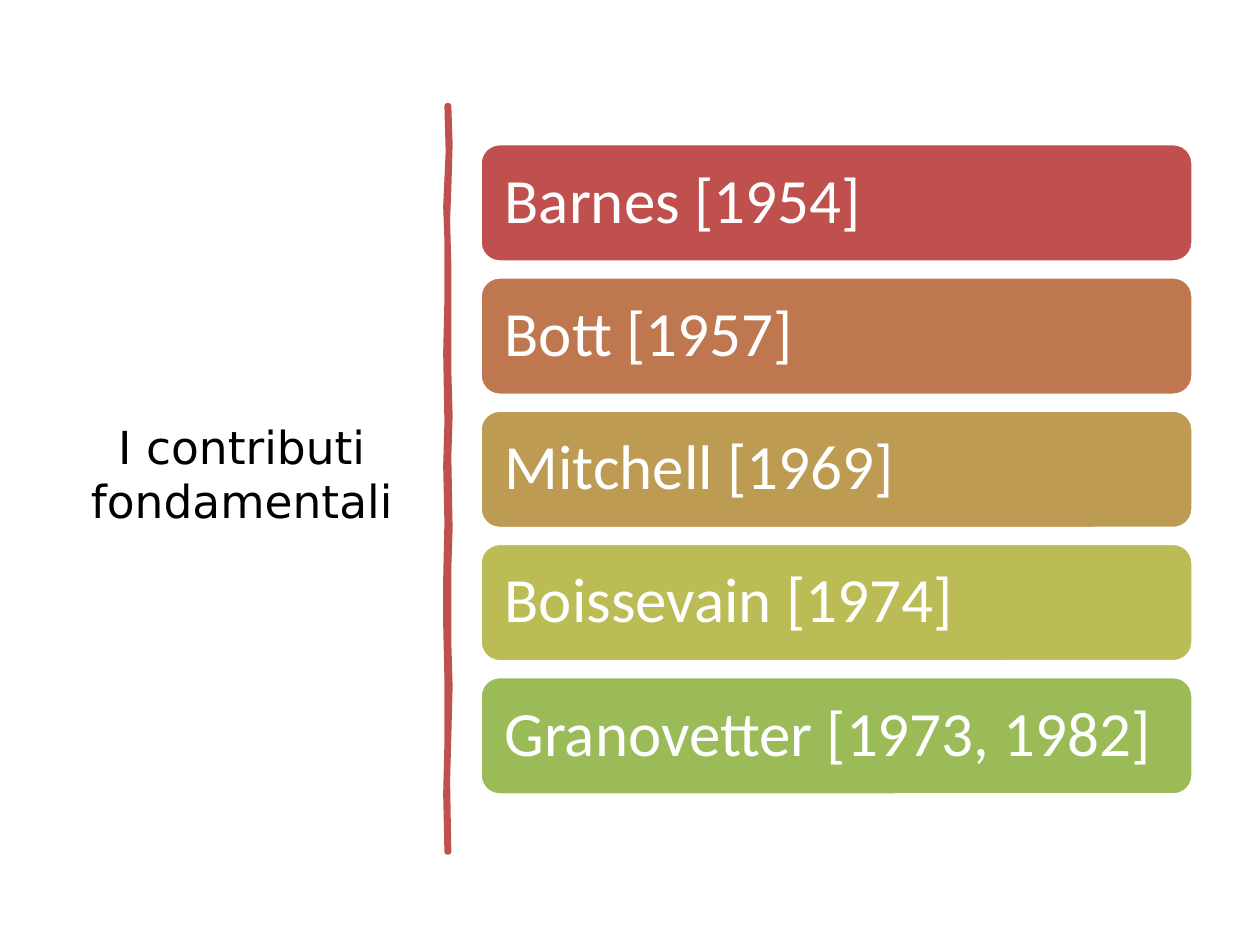
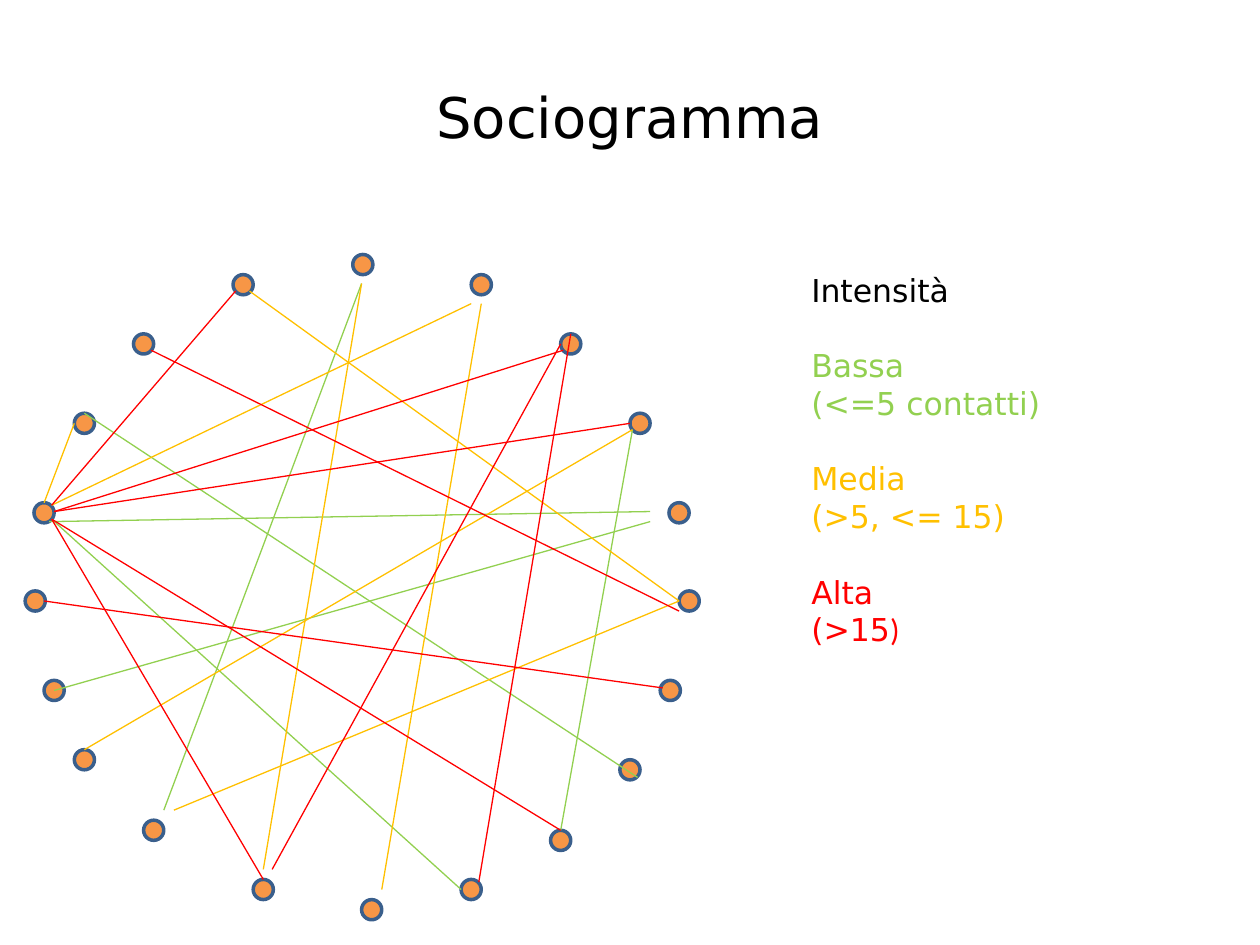
from dataclasses import dataclass
from typing import Any, NamedTuple

from lxml.etree import SubElement
from pptx import Presentation
from pptx.dml.color import RGBColor as Rgb
from pptx.enum.shapes import MSO_CONNECTOR as Conn, MSO_SHAPE as Form
from pptx.enum.text import MSO_ANCHOR as Anchor, PP_ALIGN as Align
from pptx.oxml.ns import qn
from pptx.util import Inches, Pt


# Shared colours, fonts and sizes
@dataclass(frozen=True)
class Theme:
    sans: str = "DejaVu Sans"
    body: str = "Calibri"
    black: str = "000000"
    white: str = "FFFFFF"
    brush: str = "C0504D"
    node: str = "F79646"
    rim: str = "3A5F8C"
    low: str = "92D050"
    mid: str = "FFC000"
    high: str = "FF0000"
    side: int = 26
    head: int = 32
    bar: int = 36
    key: int = 18
    thin: float = 0.75
    edge: float = 2
    thick: float = 3.25


THEME = Theme()


class Box(NamedTuple):
    left: float
    top: float
    width: float
    height: float


class Bar(NamedTuple):
    text: str
    fill: str


class Link(NamedTuple):
    x1: float
    y1: float
    x2: float
    y2: float


class Level(NamedTuple):
    name: str
    range: str
    tone: str
    links: list[Link]


# Slide 1: authors and the hand-drawn rule
BARS = [
    Bar("Barnes [1954]", "C0504D"),
    Bar("Bott [1957]", "BF7750"),
    Bar("Mitchell [1969]", "BD9B53"),
    Bar("Boissevain [1974]", "BCBC56"),
    Bar("Granovetter [1973, 1982]", "9BBB59"),
]
FIRST, LAST = 1.14, 5.37
RIGHT = [(3.56, 0.84), (3.57, 1.15), (3.56, 1.5), (3.55, 1.75), (3.56, 2.1),
         (3.56, 2.94), (3.57, 3.3), (3.56, 3.62), (3.57, 4.2), (3.56, 4.5),
         (3.56, 5.1), (3.57, 5.45), (3.56, 5.84), (3.55, 6.2), (3.56, 6.76)]
LEFT = [(3.55, 6.76), (3.54, 6.3), (3.55, 5.9), (3.55, 5.39), (3.54, 4.95),
        (3.54, 4.6), (3.55, 4.15), (3.54, 3.7), (3.55, 3.35), (3.54, 2.8),
        (3.55, 2.38), (3.55, 1.9), (3.54, 1.64), (3.56, 1.2), (3.55, 0.84)]

# Slide 2: nodes (left, top) and links by strength
DOT = 0.16
NODES = [
    (2.8, 2.02), (3.74, 2.18), (4.45, 2.65), (5, 3.28), (5.31, 3.99),
    (5.39, 4.69), (1.06, 2.65), (1.85, 2.18), (2.87, 7.14), (3.66, 6.98),
    (4.37, 6.59), (4.92, 6.03), (5.24, 5.4), (0.27, 3.99), (0.59, 3.28),
    (0.2, 4.69), (0.35, 5.4), (0.59, 5.95), (1.14, 6.51), (2.01, 6.98),
]
LEVELS = [
    Level("Bassa", "(<=5 contatti)", THEME.low, [
        Link(0.39, 4.14, 5.16, 4.06), Link(0.41, 4.12, 3.66, 7.06),
        Link(2.87, 2.25, 1.3, 6.43), Link(5.16, 4.14, 0.43, 5.48),
        Link(5.06, 6.17, 0.67, 3.28), Link(5.02, 3.41, 4.45, 6.59),
    ]),
    Level("Media", "(>5, <= 15)", THEME.mid, [
        Link(2.87, 2.25, 2.09, 6.9), Link(3.74, 2.41, 0.41, 4.01),
        Link(5.39, 4.77, 1.38, 6.43), Link(1.98, 2.31, 5.39, 4.77),
        Link(5.02, 3.41, 0.67, 5.95), Link(3.82, 2.41, 3.03, 7.06),
        Link(0.59, 3.36, 0.35, 3.99),
    ]),
    Level("Alta", "(>15)", THEME.high, [
        Link(4.53, 2.65, 3.8, 7), Link(5, 3.36, 0.43, 4.06),
        Link(4.47, 2.78, 0.43, 4.06), Link(1.87, 2.31, 0.41, 4.01),
        Link(1.2, 2.78, 5.39, 4.85), Link(4.45, 2.73, 2.16, 6.9),
        Link(0.41, 4.12, 2.09, 6.98), Link(5.26, 5.46, 0.35, 4.77),
        Link(0.41, 4.12, 4.45, 6.59),
    ]),
]


# Helpers
def apply(item: Any, values: dict[str, Any]) -> None:
    for name, value in values.items():
        setattr(item, name, value)


def inch(box: Box) -> list[int]:
    return [Inches(part) for part in box]


def write(para: Any, text: str, face: str, size: int, tone: str) -> None:
    run = para.add_run()
    run.text = text
    apply(run.font, {"name": face, "size": Pt(size)})
    run.font.color.rgb = Rgb.from_string(tone)


def stroke(line: Any, tone: str, width: float) -> None:
    line.color.rgb = Rgb.from_string(tone)
    line.width = Pt(width)


def paint(shape: Any, fill: str, rim: str, width: float) -> None:
    shape.shadow.inherit = False
    shape.fill.solid()
    shape.fill.fore_color.rgb = Rgb.from_string(fill)
    stroke(shape.line, rim, width)


def add_title(slide: Any, text: str, box: Box, size: int) -> None:
    frame = slide.shapes.add_textbox(*inch(box)).text_frame
    apply(frame, {"word_wrap": True, "vertical_anchor": Anchor.MIDDLE})
    para = frame.paragraphs[0]
    para.alignment = Align.CENTER
    write(para, text, THEME.sans, size, THEME.black)


def add_brush(slide: Any) -> None:
    points = [(Inches(x), Inches(y)) for x, y in RIGHT + LEFT]
    build = slide.shapes.build_freeform(*points[0])
    build.add_line_segments(points[1:], close=True)
    paint(build.convert_to_shape(), THEME.brush, THEME.brush, THEME.thick)


def add_bar(slide: Any, bar: Bar, top: float) -> None:
    box = Box(3.81, top, 5.66, 0.94)
    shape = slide.shapes.add_shape(Form.ROUNDED_RECTANGLE, *inch(box))
    paint(shape, bar.fill, THEME.white, THEME.edge)
    frame = shape.text_frame
    pad = Inches(0.15)
    apply(frame, {"word_wrap": True, "vertical_anchor": Anchor.MIDDLE,
                  "margin_left": pad, "margin_right": pad,
                  "margin_top": pad, "margin_bottom": pad})
    para = frame.paragraphs[0]
    apply(para, {"alignment": Align.LEFT, "line_spacing": 0.9})
    write(para, bar.text, THEME.body, THEME.bar, THEME.white)


def add_link(slide: Any, link: Link, tone: str) -> None:
    line = slide.shapes.add_connector(Conn.STRAIGHT, *[Inches(p) for p in link])
    stroke(line.line, tone, THEME.thin)
    SubElement(line._element.spPr, qn("a:effectLst"))


def add_key(slide: Any) -> None:
    frame = slide.shapes.add_textbox(*inch(Box(6.34, 2.1, 2.91, 4.14))).text_frame
    frame.word_wrap = True
    write(frame.paragraphs[0], "Intensità", THEME.sans, THEME.key, THEME.black)
    for level in LEVELS:
        para = frame.add_paragraph()
        para.space_before = Pt(21.5)
        write(para, level.name, THEME.sans, THEME.key, level.tone)
        para = frame.add_paragraph()
        if level is LEVELS[-1]:
            write(para, level.range[:-1], THEME.sans, THEME.key, level.tone)
            write(para, level.range[-1], THEME.body, THEME.key, level.tone)
        else:
            write(para, level.range, THEME.sans, THEME.key, level.tone)


# Slides
def draw_list(slide: Any) -> None:
    add_title(slide, "I contributi fondamentali", Box(0.52, 0.7, 2.8, 6.11), THEME.side)
    add_brush(slide)
    step = (LAST - FIRST) / (len(BARS) - 1)
    for row, bar in enumerate(BARS):
        add_bar(slide, bar, FIRST + row * step)


def draw_graph(slide: Any) -> None:
    add_title(slide, "Sociogramma", Box(0.5, 0.3, 9, 1.25), THEME.head)
    for left, top in NODES:
        dot = slide.shapes.add_shape(Form.OVAL, *inch(Box(left, top, DOT, DOT)))
        paint(dot, THEME.node, THEME.rim, THEME.edge)
    for level in LEVELS:
        for link in level.links:
            add_link(slide, link, level.tone)
    add_key(slide)


def main() -> None:
    deck = Presentation()
    apply(deck, {"slide_width": Inches(10), "slide_height": Inches(7.5)})
    for draw in (draw_list, draw_graph):
        draw(deck.slides.add_slide(deck.slide_layouts[6]))
    deck.save("out.pptx")


if __name__ == "__main__":
    main()
